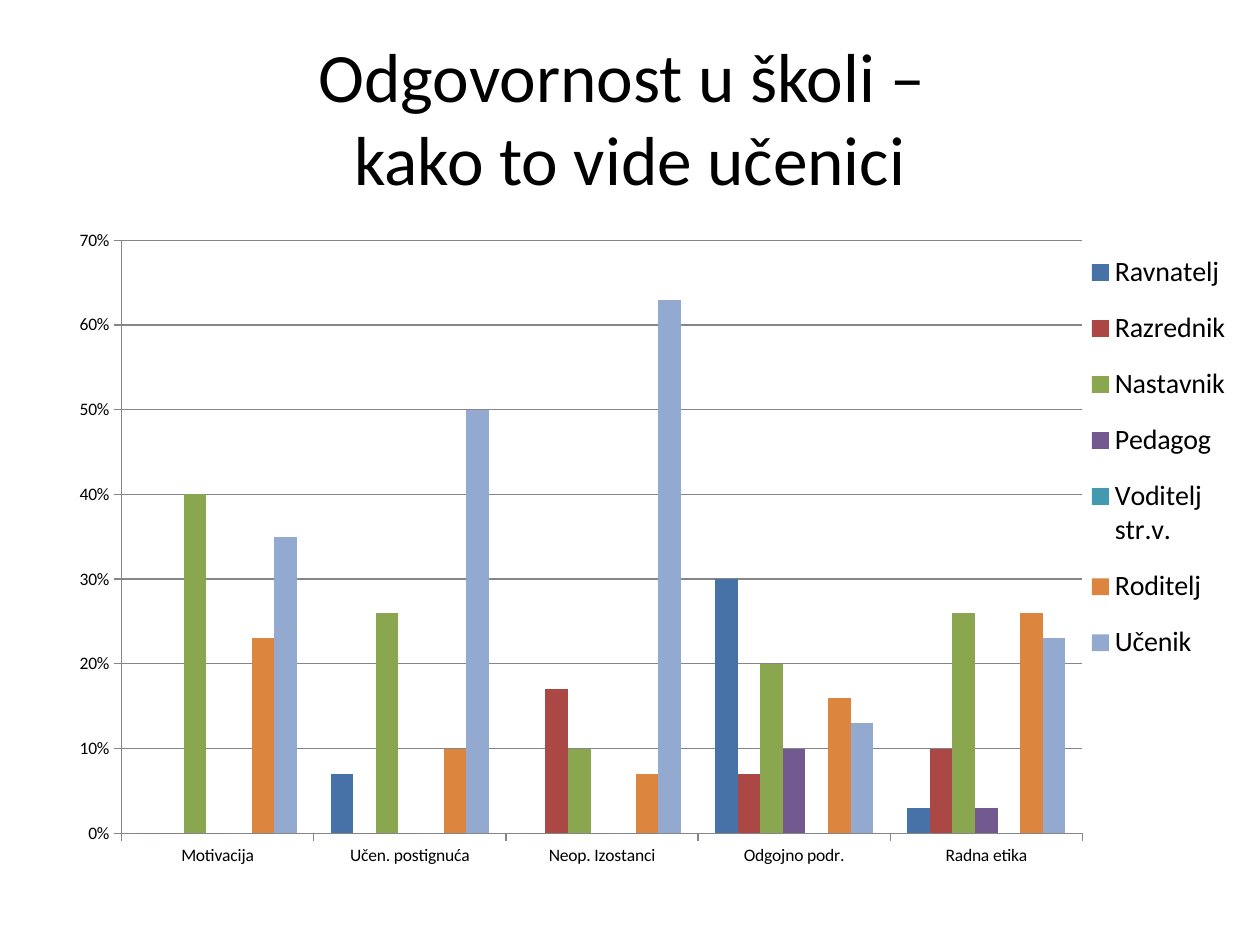
from pptx import Presentation
from pptx.chart.data import CategoryChartData
from pptx.dml.color import RGBColor
from pptx.enum.chart import XL_CHART_TYPE, XL_LEGEND_POSITION, XL_TICK_MARK
from pptx.enum.text import MSO_ANCHOR, PP_ALIGN
from pptx.oxml import parse_xml
from pptx.oxml.ns import nsdecls, qn
from pptx.util import Pt

FONT = "Calibri"
COLORS = {
    "text": "000000",
    "line": "868686",
    "Ravnatelj": "4672A8",
    "Razrednik": "AB4744",
    "Nastavnik": "8AA64F",
    "Pedagog": "725990",
    "Voditelj str.v.": "4299B0",
    "Roditelj": "DC853E",
    "Učenik": "93A9D0",
}
TITLE_LINES = ["Odgovornost u školi – ", "kako to vide učenici"]
TOPICS = ["Motivacija", "Učen. postignuća", "Neop. Izostanci", "Odgojno podr.", "Radna etika"]
RESPONSIBILITY = {
    "Ravnatelj": (0, 0.07, 0, 0.3, 0.03),
    "Razrednik": (0, 0, 0.17, 0.07, 0.1),
    "Nastavnik": (0.4, 0.26, 0.1, 0.2, 0.26),
    "Pedagog": (0, 0, 0, 0.1, 0.03),
    "Voditelj str.v.": (0, 0, 0, 0, 0),
    "Roditelj": (0.23, 0.1, 0.07, 0.16, 0.26),
    "Učenik": (0.35, 0.5, 0.63, 0.13, 0.23),
}
PLOT_AREA = (0.05, 0.03, 0.82, 0.9)
LEGEND_AREA = (0.87, 0.02, 0.13, 0.68)


def color(name):
    return RGBColor.from_string(COLORS[name])


def style_font(font, size):
    font.name = FONT
    font.size = Pt(size)
    font.color.rgb = color("text")


def style_line(line):
    line.color.rgb = color("line")
    line.width = Pt(0.75)


def layout(area, target=""):
    x, y, w, h = area
    return parse_xml(
        f'<c:layout {nsdecls("c")}><c:manualLayout>{target}'
        '<c:xMode val="edge"/><c:yMode val="edge"/>'
        f'<c:x val="{x}"/><c:y val="{y}"/><c:w val="{w}"/><c:h val="{h}"/>'
        "</c:manualLayout></c:layout>"
    )


def add_title(slide):
    title = slide.shapes.add_textbox(Pt(36), Pt(21.6), Pt(648), Pt(90)).text_frame
    title.word_wrap = True
    title.vertical_anchor = MSO_ANCHOR.MIDDLE
    heading = title.paragraphs[0]
    heading.alignment = PP_ALIGN.CENTER
    for index, line in enumerate(TITLE_LINES):
        if index:
            heading.add_line_break()
        run = heading.add_run()
        run.text = line
        style_font(run.font, 39.6)


def add_responsibility_chart(slide):
    data = CategoryChartData(number_format="0%")
    data.categories = TOPICS
    for role, shares in RESPONSIBILITY.items():
        data.add_series(role, shares)
    chart = slide.shapes.add_chart(
        XL_CHART_TYPE.COLUMN_CLUSTERED, Pt(36), Pt(126), Pt(669.6), Pt(376.6), data
    ).chart
    chart.has_title = False
    style_font(chart.font, 10)

    columns = chart.plots[0]
    columns.gap_width = 150
    columns.overlap = 0
    columns.vary_by_categories = False
    for role in columns.series:
        role.format.fill.solid()
        role.format.fill.fore_color.rgb = color(role.name)

    shares_axis = chart.value_axis
    shares_axis.minimum_scale, shares_axis.maximum_scale = 0, 0.7
    shares_axis.major_unit = 0.1
    shares_axis.has_major_gridlines = True
    style_line(shares_axis.major_gridlines.format.line)
    shares_axis.tick_labels.number_format = "0%"
    shares_axis.tick_labels.number_format_is_linked = False
    for axis in (chart.category_axis, shares_axis):
        axis.major_tick_mark = XL_TICK_MARK.OUTSIDE
        style_line(axis.format.line)

    chart.has_legend = True
    legend = chart.legend
    legend.position = XL_LEGEND_POSITION.RIGHT
    legend.include_in_layout = False
    style_font(legend.font, 16)

    plot_area = chart.element.find(".//" + qn("c:plotArea"))
    legend_box = chart.element.find(".//" + qn("c:legend"))
    for box in (plot_area, legend_box):
        for old in box.findall(qn("c:layout")):
            box.remove(old)
    plot_area.insert(0, layout(PLOT_AREA, '<c:layoutTarget val="inner"/>'))
    legend_box.find(qn("c:legendPos")).addnext(layout(LEGEND_AREA))


def main():
    deck = Presentation()
    deck.slide_width, deck.slide_height = Pt(720), Pt(540)
    slide = deck.slides.add_slide(deck.slide_layouts[6])
    add_title(slide)
    add_responsibility_chart(slide)
    deck.save("out.pptx")


if __name__ == "__main__":
    main()
